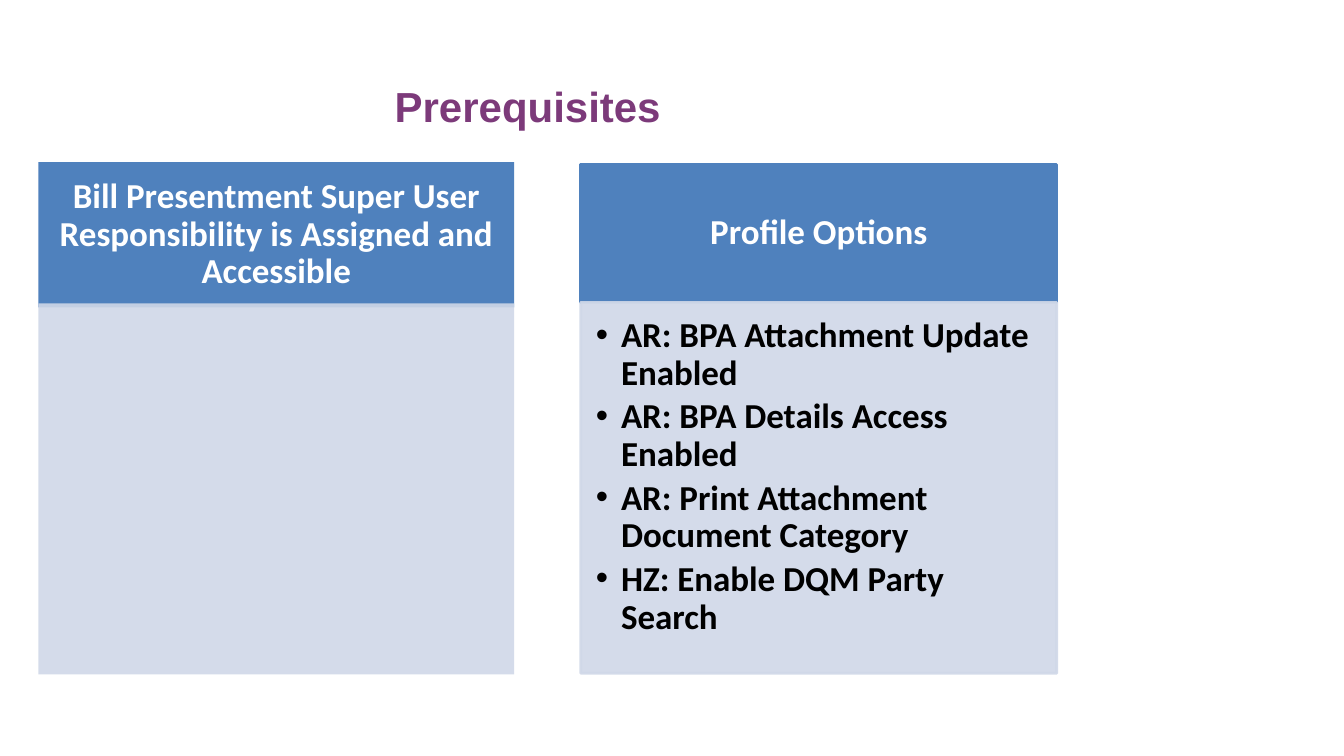
from lxml.etree import SubElement
from pptx import Presentation
from pptx.dml.color import RGBColor
from pptx.enum.shapes import MSO_SHAPE
from pptx.enum.text import MSO_ANCHOR, MSO_AUTO_SIZE, PP_ALIGN
from pptx.oxml.ns import qn
from pptx.util import Pt

PX = 9144  # 100 px to the inch
TITLE_ONLY = 5

PURPLE = RGBColor(0x7C, 0x3A, 0x7A)
BLUE = RGBColor(0x4F, 0x81, 0xBD)
PALE_BLUE = RGBColor(0xD0, 0xD8, 0xE8)
WHITE = RGBColor(0xFF, 0xFF, 0xFF)
BLACK = RGBColor(0x00, 0x00, 0x00)

COLUMN_WIDTH = 472
BODY_HEIGHT = 368
PROFILE_OPTIONS = [
    "AR: BPA Attachment Update Enabled",
    "AR: BPA Details Access Enabled",
    "AR: Print Attachment Document Category",
    "HZ: Enable DQM Party Search",
]


def add_run(p, text, font, size, color):
    r = p.add_run()
    r.text = text
    r.font.name = font
    r.font.size = Pt(size)
    r.font.bold = True
    r.font.color.rgb = color


def set_alpha(fill, percent):
    """Make a solid fill partly transparent."""
    color = fill._xPr.find(qn("a:solidFill"))[0]
    SubElement(color, qn("a:alpha"), val=str(percent * 1000))


def set_insets(tf, left, top, right, bottom):
    tf.margin_left, tf.margin_top = left * PX, top * PX
    tf.margin_right, tf.margin_bottom = right * PX, bottom * PX


def add_bullet(p, indent):
    pPr = p._p.get_or_add_pPr()
    pPr.set("marL", str(indent * PX))
    pPr.set("indent", str(-indent * PX))
    SubElement(pPr, qn("a:buFont"), typeface="Arial")
    SubElement(pPr, qn("a:buChar"), char="•")


def add_box(slide, x, y, height, color, outlined, opacity=100):
    s = slide.shapes.add_shape(MSO_SHAPE.RECTANGLE, x * PX, y * PX,
                               COLUMN_WIDTH * PX, height * PX)
    s.shadow.inherit = False
    s.fill.solid()
    s.fill.fore_color.rgb = color
    fills = [s.fill]
    if outlined:
        s.line.width = Pt(2)
        s.line.color.rgb = color
        fills.append(s.line.fill)
    else:
        s.line.fill.background()
    if opacity < 100:
        for fill in fills:
            set_alpha(fill, opacity)
    return s


def add_header(slide, x, y, height, text, outlined):
    s = add_box(slide, x, y, height, BLUE, outlined)
    tf = s.text_frame
    tf.word_wrap = True
    tf.vertical_anchor = MSO_ANCHOR.MIDDLE
    set_insets(tf, 19, 11, 19, 11)
    p = tf.paragraphs[0]
    p.alignment = PP_ALIGN.CENTER
    p.line_spacing = 0.9
    add_run(p, text, "Calibri", 25, WHITE)


def add_body(slide, x, y, items, outlined):
    s = add_box(slide, x, y, BODY_HEIGHT, PALE_BLUE, outlined, opacity=90)
    tf = s.text_frame
    tf.word_wrap = True
    tf.vertical_anchor = MSO_ANCHOR.TOP
    set_insets(tf, 15, 15, 19, 22)
    for i, item in enumerate(items):
        p = tf.add_paragraph() if i else tf.paragraphs[0]
        p.alignment = PP_ALIGN.LEFT
        p.line_spacing = 0.9
        p.space_after = Pt(4)
        add_bullet(p, 25)
        add_run(p, item, "Calibri", 25, BLACK)


def set_title(slide, text):
    title = slide.shapes.title
    title.left, title.top = 38 * PX, 22 * PX
    title.width, title.height = 971 * PX, 113 * PX
    tf = title.text_frame
    tf.auto_size = MSO_AUTO_SIZE.NONE
    tf.vertical_anchor = MSO_ANCHOR.BOTTOM
    p = tf.paragraphs[0]
    p.alignment = PP_ALIGN.CENTER
    add_run(p, text, "Arial", 30, PURPLE)


def main():
    prs = Presentation()
    prs.slide_width, prs.slide_height = 1333 * PX, 750 * PX
    slide = prs.slides.add_slide(prs.slide_layouts[TITLE_ONLY])
    set_title(slide, "Prerequisites")

    add_header(slide, 38, 161, 144,
               "Bill Presentment Super User Responsibility is Assigned and Accessible",
               outlined=False)
    add_body(slide, 38, 301, [], outlined=False)

    add_header(slide, 576, 163, 137, "Profile Options", outlined=True)
    add_body(slide, 576, 300, PROFILE_OPTIONS, outlined=True)
    prs.save("out.pptx")


if __name__ == "__main__":
    main()
